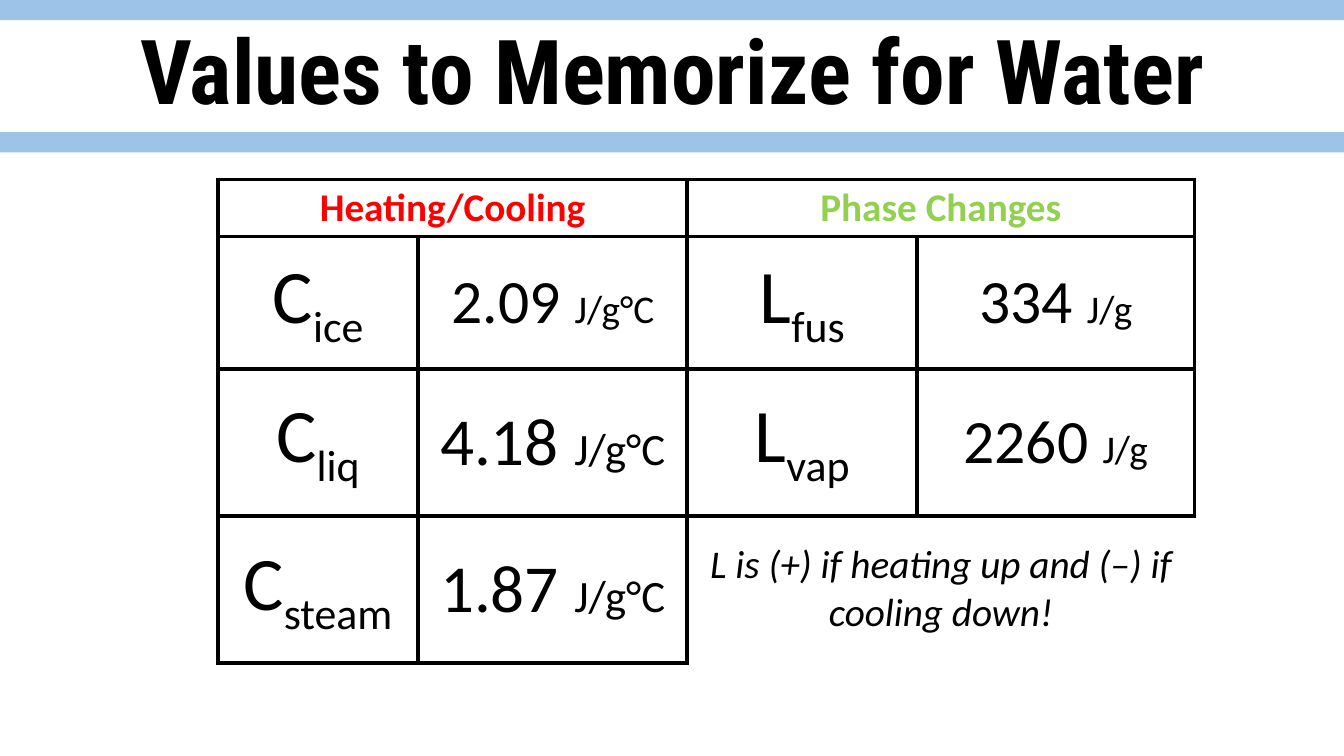
from dataclasses import dataclass

from lxml.etree import SubElement
from pptx import Presentation
from pptx.dml.color import RGBColor
from pptx.enum.shapes import MSO_SHAPE
from pptx.enum.text import MSO_ANCHOR, MSO_AUTO_SIZE, PP_ALIGN
from pptx.oxml.ns import qn
from pptx.util import Cm, Pt

BLACK = RGBColor(0x00, 0x00, 0x00)
RED = RGBColor(0xFF, 0x00, 0x00)
GREEN = RGBColor(0x92, 0xD0, 0x50)
BLUE = RGBColor(0x9D, 0xC3, 0xE6)

SLIDE_W, SLIDE_H = Cm(33.87), Cm(19.05)
BAND_TOPS = (0, 3.33)
COL_WIDTHS = (5.05, 6.78, 5.79, 6.99)
ROW_HEIGHTS = (1.4, 3.33, 3.71, 3.71)
BORDER = Pt(3)


@dataclass
class Constant:
    row: int
    col: int
    symbol: str
    subscript: str
    value: str
    unit: str
    value_size: int = 44
    unit_size: int = 28


@dataclass
class Label:
    """Text in a cell merged with its right neighbour."""
    row: int
    col: int
    text: str
    color: RGBColor
    bold: bool = False
    italic: bool = False


CONSTANTS = (
    Constant(1, 0, "C", "ice", "2.09", "J/g°C"),
    Constant(1, 2, "L", "fus", "334", "J/g"),
    Constant(2, 0, "C", "liq", "4.18", "J/g°C", 48, 32),
    Constant(2, 2, "L", "vap", "2260", "J/g"),
    Constant(3, 0, "C", "steam", "1.87", "J/g°C", 48, 32),
)
HEADINGS = (
    Label(0, 0, "Heating/Cooling", RED, bold=True),
    Label(0, 2, "Phase Changes", GREEN, bold=True),
)
NOTE = Label(3, 2, "L is (+) if heating up and (–) if cooling down!", BLACK, italic=True)


def add_run(p, text: str, size: float, color: RGBColor = BLACK, font: str = "Calibri",
            bold: bool = False, italic: bool = False):
    r = p.add_run()
    r.text = text
    f = r.font
    f.name, f.size, f.bold, f.italic = font, Pt(size), bold, italic
    f.color.rgb = color
    return r


def add_band(slide, top: float) -> None:
    sp = slide.shapes.add_shape(MSO_SHAPE.RECTANGLE, 0, Cm(top), SLIDE_W, Cm(0.51))
    sp.shadow.inherit = False
    sp.fill.solid()
    sp.fill.fore_color.rgb = BLUE
    sp.line.fill.background()


def add_title(slide, text: str) -> None:
    tf = slide.shapes.add_textbox(0, Cm(0.25), SLIDE_W, Cm(3)).text_frame
    tf.word_wrap = True
    tf.auto_size = MSO_AUTO_SIZE.SHAPE_TO_FIT_TEXT
    p = tf.paragraphs[0]
    p.alignment = PP_ALIGN.CENTER
    add_run(p, text, 64, font="Roboto Condensed", bold=True)


def style_cell(cell, sides: str) -> None:
    """Draw borders on the given sides (L, R, T, B) and clear the rest and the fill."""
    tc_pr = cell._tc.get_or_add_tcPr()
    for side in "LRTB":
        ln = SubElement(tc_pr, qn(f"a:ln{side}"), w=str(BORDER))
        if side in sides:
            fill = SubElement(ln, qn("a:solidFill"))
            SubElement(fill, qn("a:srgbClr"), val=str(BLACK))
        else:
            SubElement(ln, qn("a:noFill"))
    cell.fill.background()
    cell.text_frame.paragraphs[0].alignment = PP_ALIGN.CENTER


def fill_constant(table, c: Constant) -> None:
    p = table.cell(c.row, c.col).text_frame.paragraphs[0]
    add_run(p, c.symbol, 54)
    sub = add_run(p, c.subscript, 54)
    sub._r.get_or_add_rPr().set("baseline", "-25000")
    p = table.cell(c.row, c.col + 1).text_frame.paragraphs[0]
    add_run(p, c.value + " ", c.value_size)
    add_run(p, c.unit, c.unit_size)


def fill_label(table, label: Label) -> None:
    cell = table.cell(label.row, label.col)
    cell.merge(table.cell(label.row, label.col + 1))
    add_run(cell.text_frame.paragraphs[0], label.text, 28, label.color,
            bold=label.bold, italic=label.italic)


def add_values_table(slide) -> None:
    table = slide.shapes.add_table(
        len(ROW_HEIGHTS), len(COL_WIDTHS), Cm(5.49), Cm(4.52),
        Cm(sum(COL_WIDTHS)), Cm(sum(ROW_HEIGHTS))).table
    table.first_row = table.horz_banding = False
    for column, width in zip(table.columns, COL_WIDTHS):
        column.width = Cm(width)
    for i, (row, height) in enumerate(zip(table.rows, ROW_HEIGHTS)):
        row.height = Cm(height)
        for j, cell in enumerate(row.cells):
            in_note = i == NOTE.row and j >= NOTE.col
            note_sides = "LT" if j == NOTE.col else "T"
            style_cell(cell, note_sides if in_note else "LRTB")
            if i > 0:
                cell.vertical_anchor = MSO_ANCHOR.MIDDLE
    for constant in CONSTANTS:
        fill_constant(table, constant)
    for label in (*HEADINGS, NOTE):
        fill_label(table, label)


def main() -> None:
    prs = Presentation()
    prs.slide_width, prs.slide_height = SLIDE_W, SLIDE_H
    slide = prs.slides.add_slide(prs.slide_layouts[6])
    for top in BAND_TOPS:
        add_band(slide, top)
    add_title(slide, "Values to Memorize for Water")
    add_values_table(slide)
    prs.save("out.pptx")


if __name__ == "__main__":
    main()
